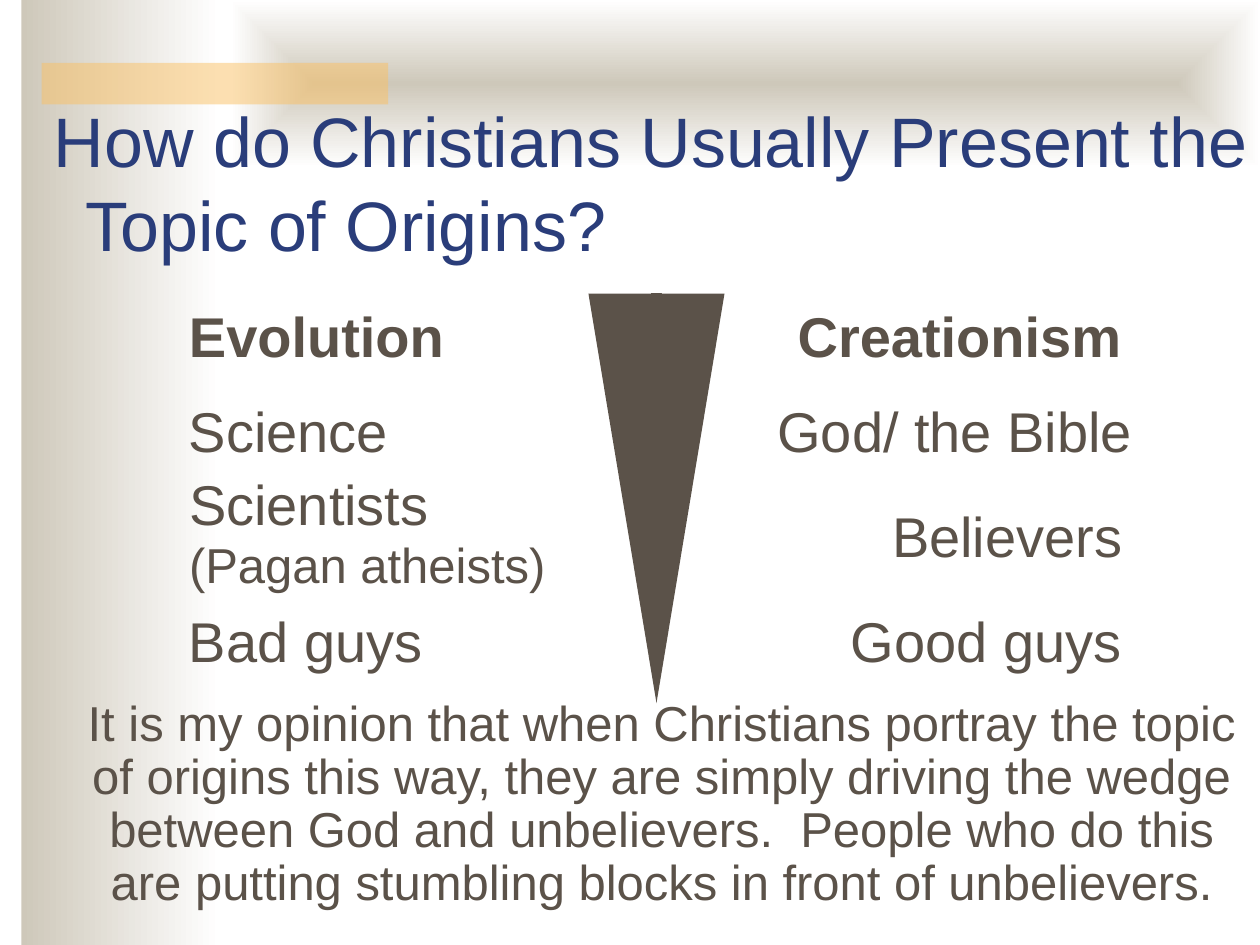
from dataclasses import dataclass

from lxml.etree import SubElement
from pptx import Presentation
from pptx.dml.color import RGBColor
from pptx.enum.shapes import MSO_SHAPE
from pptx.enum.text import MSO_ANCHOR, MSO_AUTO_SIZE, PP_ALIGN
from pptx.oxml.ns import qn
from pptx.util import Inches, Pt

SAND = RGBColor(0xCE, 0xC8, 0xBA)
WHITE = RGBColor(0xFF, 0xFF, 0xFF)
AMBER = RGBColor(0xFA, 0xC1, 0x64)
BROWN = RGBColor(0x5B, 0x52, 0x49)
NAVY = RGBColor(0x2A, 0x3D, 0x7A)
FONT = "Arial"
LEFT_COLUMN = 1.5


@dataclass
class Label:
    lines: list[tuple[str, int]]  # wording and size in points
    left: float
    top: float
    width: float
    height: float = 0.43
    bold: bool = False
    wrap: bool = False


LABELS = [
    Label([("Creationism", 32)], 6.33, 2.5, 2.59, bold=True),
    Label([("Evolution", 32)], LEFT_COLUMN, 2.5, 2.04, bold=True),
    Label([("God/ the Bible", 32)], 6.17, 3.25, 2.84),
    Label([("Science", 32)], LEFT_COLUMN, 3.25, 1.83, 0.6),
    Label([("Believers", 32)], 7.08, 4.08, 1.92, wrap=True),
    Label([("Scientists", 32), ("(Pagan atheists)", 28)],
          LEFT_COLUMN, 3.83, 2.95, 0.9, wrap=True),
    Label([("Good guys", 32)], 6.75, 4.92, 2.25, wrap=True),
    Label([("Bad guys", 32)], LEFT_COLUMN, 4.92, 2.1, 0.6),
]


def add_plain_shape(page, kind: MSO_SHAPE, left: float, top: float,
                    width: float, height: float):
    shape = page.shapes.add_shape(
        kind, Inches(left), Inches(top), Inches(width), Inches(height))
    shape.shadow.inherit = False
    shape.line.fill.background()
    return shape


def fill_solid(shape, color: RGBColor) -> None:
    shape.fill.solid()
    shape.fill.fore_color.rgb = color


def fill_fade(shape, from_center: bool = False) -> None:
    """Fade from sand to white, left to right or outward from the center."""
    shape.fill.gradient()
    shape.fill.gradient_angle = 0
    for stop, color, position in zip(shape.fill.gradient_stops, (SAND, WHITE), (0, 1)):
        stop.color.rgb = color
        stop.position = position
    if from_center:
        gradient = shape.element.spPr.find(qn("a:gradFill"))
        gradient.remove(gradient.find(qn("a:lin")))
        route = SubElement(gradient, qn("a:path"), path="shape")
        SubElement(route, qn("a:fillToRect"),
                   {side: "50000" for side in ("l", "t", "r", "b")})


def add_text_box(page, left: float, top: float, width: float, height: float):
    box = page.shapes.add_textbox(
        Inches(left), Inches(top), Inches(width), Inches(height))
    box.text_frame.word_wrap = True
    return box.text_frame


def add_span(para, text: str, size: int, color: RGBColor, bold: bool = False) -> None:
    span = para.add_run()
    span.text = text
    span.font.name = FONT
    span.font.size = Pt(size)
    span.font.bold = bold
    span.font.color.rgb = color


def hang_indent(para, inches: float) -> None:
    properties = para._p.get_or_add_pPr()
    properties.set("marL", str(Inches(inches)))
    properties.set("indent", str(-Inches(inches)))


def add_label(page, label: Label) -> None:
    frame = add_text_box(page, label.left, label.top, label.width, label.height)
    frame.margin_left = frame.margin_right = 0
    frame.margin_top = frame.margin_bottom = 0
    frame.word_wrap = label.wrap
    frame.auto_size = MSO_AUTO_SIZE.SHAPE_TO_FIT_TEXT
    for index, (text, size) in enumerate(label.lines):
        para = frame.add_paragraph() if index else frame.paragraphs[0]
        hang_indent(para, 0.5)
        para.line_spacing = 0.8
        if index:
            para.space_before = Pt(0.2 * size)
        add_span(para, text, size, BROWN, label.bold)


def main() -> None:
    deck = Presentation()
    deck.slide_width, deck.slide_height = Inches(10), Inches(7.5)
    page = deck.slides.add_slide(deck.slide_layouts[6])

    # Background bands
    fill_fade(add_plain_shape(page, MSO_SHAPE.RECTANGLE, 0.17, 0, 1.58, 7.5))
    fill_fade(add_plain_shape(page, MSO_SHAPE.RECTANGLE, 1.83, 0, 8.17, 1.33),
              from_center=True)
    accent = add_plain_shape(page, MSO_SHAPE.RECTANGLE, 0.33, 0.5, 2.75, 0.33)
    fill_solid(accent, AMBER)
    accent_color = accent.element.spPr.find(qn("a:solidFill"))[0]
    SubElement(accent_color, qn("a:alpha"), val="50000")

    # Bar behind the wedge
    bar = add_plain_shape(page, MSO_SHAPE.RECTANGLE, 5.17, 2.33, 0.08, 2.92)
    fill_solid(bar, BROWN)
    bar.line.color.rgb = BROWN
    bar.line.width = Pt(0)

    # Title
    frame = add_text_box(page, 0.33, 0.83, 9.83, 1.33)
    frame.vertical_anchor = MSO_ANCHOR.BOTTOM
    title = frame.paragraphs[0]
    hang_indent(title, 0.25)
    add_span(title, "How do Christians Usually Present the Topic of Origins?", 40, NAVY)

    # Closing opinion
    opinion = add_text_box(page, 0.5, 5.5, 9.5, 1.75).paragraphs[0]
    opinion.alignment = PP_ALIGN.CENTER
    opinion.line_spacing = 0.9
    add_span(opinion,
             "It is my opinion that when Christians portray the topic of origins "
             "this way, they are simply driving the wedge between God and "
             "unbelievers.  People who do this are putting stumbling blocks in "
             "front of unbelievers.", 28, BROWN)

    # Two opposing columns
    for label in LABELS:
        add_label(page, label)

    # Wedge
    wedge = add_plain_shape(page, MSO_SHAPE.ISOSCELES_TRIANGLE, 4.67, 2.33, 1.08, 3.25)
    wedge.rotation = 180
    fill_solid(wedge, BROWN)

    deck.save("out.pptx")


if __name__ == "__main__":
    main()
